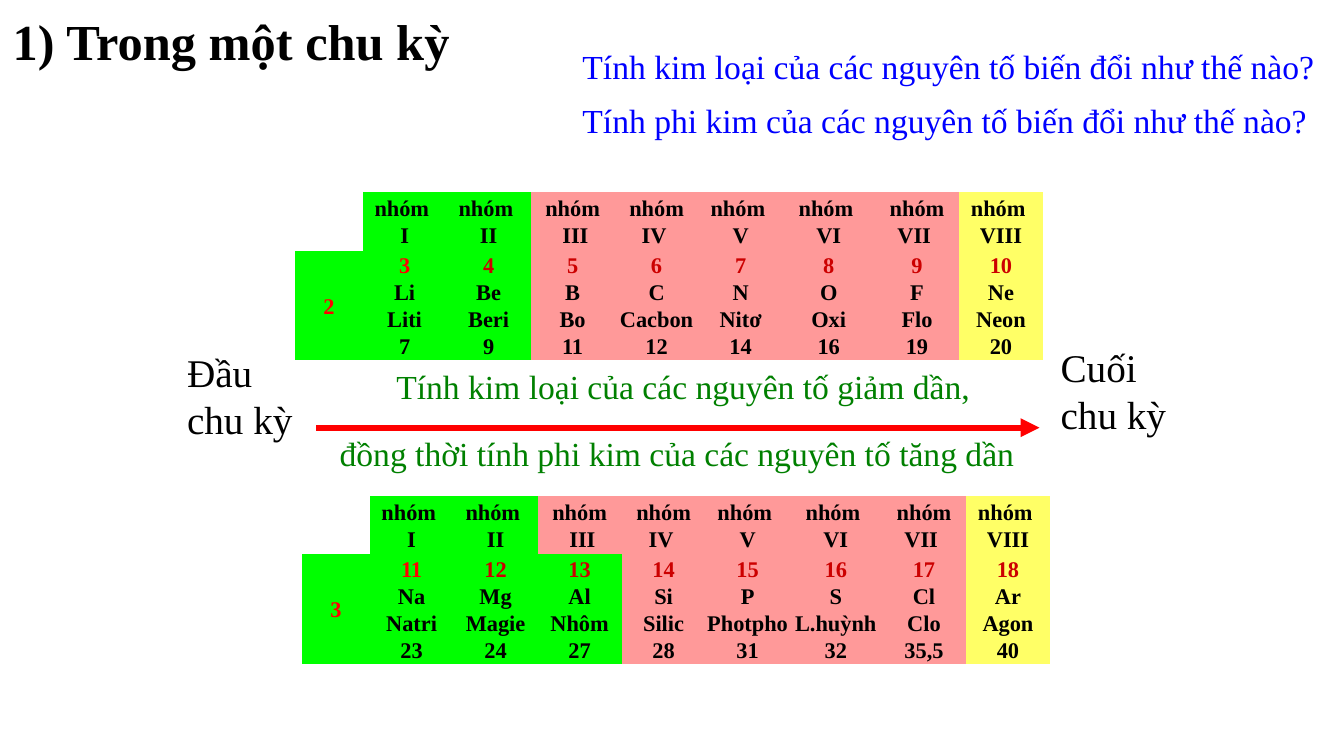
import pptx
import pptx.util
import pptx.dml.color
import pptx.enum.shapes
import pptx.enum.text
import pptx.oxml.ns
from lxml import etree

Pt = pptx.util.Pt
FONT = "Times New Roman"
COLORS = {
    "black": "000000", "red": "FF0000", "dark_red": "CC0000",
    "blue": "0000FF", "dark_green": "008000",
    "metal": "00FF00", "nonmetal": "FF9999", "noble": "FFFF66",
}

# Content: text, box (left, top, width, height), size, bold, colour
TEXTS = [
    ("1) Trong một chu kỳ", (2, 3.6, 595, 51), 36, True, "black"),
    ("Đầu chu kỳ", (126.5, 245, 90, 75), 28, False, "black"),
    ("Cuối chu kỳ", (750.5, 241.7, 90, 75), 28, False, "black"),
    ("Tính kim loại của các nguyên tố biến đổi như thế nào?",
     (409, 29, 546, 36.5), 24, False, "blue"),
    ("Tính phi kim của các nguyên tố biến đổi như thế nào?",
     (409, 67.5, 534, 36.5), 24, False, "blue"),
    ("Tính kim loại của các nguyên tố giảm dần,",
     (276, 258, 542, 36), 24, False, "dark_green"),
    ("đồng thời tính phi kim của các nguyên tố tăng dần",
     (235.5, 305.5, 528, 36), 24, False, "dark_green"),
]
GROUPS = [
    ("nhóm ", "I"), ("nhóm ", "II"), ("nhóm", " III"), ("nhóm", "IV "),
    ("nhóm ", "V"), ("nhóm ", "VI"), ("nhóm", "VII "), ("nhóm ", "VIII"),
]
# Period, left, top, number of metals, elements
PERIODS = [
    ("2", 211, 137, 2, [
        ("3", "Li", "Liti", "7"), ("4", "Be", "Beri", "9"),
        ("5", "B", "Bo", "11"), ("6", "C", "Cacbon", "12"),
        ("7", "N", "Nitơ", "14"), ("8", "O", "Oxi", "16"),
        ("9", "F", "Flo", "19"), ("10", "Ne", "Neon", "20")]),
    ("3", 216, 354, 3, [
        ("11", "Na", "Natri", "23"), ("12", "Mg", "Magie", "24"),
        ("13", "Al", "Nhôm", "27"), ("14", "Si", "Silic", "28"),
        ("15", "P", "Photpho", "31"), ("16", "S", "L.huỳnh", "32"),
        ("17", "Cl", "Clo", "35,5"), ("18", "Ar", "Agon", "40")]),
]
LABEL_W, HEAD_H, BODY_H = 48, 42, 78
COL_WIDTHS = [60, 60, 60, 60, 60, 66, 60, 60]
HEAD_METALS = 2
ARROW = (226, 742.5, 305.5)  # start x, end x, y


def rgb(name):
    return pptx.dml.color.RGBColor.from_string(COLORS[name])


def add_run(p, text, size, bold, color):
    r = p.add_run()
    r.text = text
    r.font.name = FONT
    r.font.size = Pt(size)
    r.font.bold = bold
    r.font.color.rgb = rgb(color)


def add_cell(shapes, box, fill, lines, first_color):
    sp = shapes.add_shape(pptx.enum.shapes.MSO_SHAPE.ACTION_BUTTON_CUSTOM,
                          *[Pt(v) for v in box])
    sp.shadow.inherit = False
    sp.fill.solid()
    sp.fill.fore_color.rgb = rgb(fill)
    sp.line.fill.background()
    tf = sp.text_frame
    tf.word_wrap = False
    tf.vertical_anchor = pptx.enum.text.MSO_ANCHOR.MIDDLE
    for i, line in enumerate(lines):
        p = tf.add_paragraph() if i else tf.paragraphs[0]
        p.alignment = pptx.enum.text.PP_ALIGN.CENTER
        add_run(p, line, 16, True, "black" if i else first_color)


def family(col, metals):
    if col == len(GROUPS) - 1:
        return "noble"
    return "metal" if col < metals else "nonmetal"


prs = pptx.Presentation()
prs.slide_width, prs.slide_height = Pt(960), Pt(540)
s = prs.slides.add_slide(prs.slide_layouts[6])

# Period tables: a row of group headings over a row of elements
for period, left, top, metals, elements in PERIODS:
    body_top = top + HEAD_H
    row = s.shapes.add_group_shape()
    add_cell(row.shapes, (left, body_top, LABEL_W, BODY_H), "metal",
             [period], "red")
    for col, (heading, element, width) in enumerate(
            zip(GROUPS, elements, COL_WIDTHS)):
        x = left + LABEL_W + sum(COL_WIDTHS[:col])
        add_cell(s.shapes, (x, top, width, HEAD_H),
                 family(col, HEAD_METALS), heading, "black")
        add_cell(row.shapes, (x, body_top, width, BODY_H),
                 family(col, metals), element, "dark_red" if col else "red")

# Arrow from the start to the end of a period
x1, x2, y = ARROW
arrow = s.shapes.add_connector(pptx.enum.shapes.MSO_CONNECTOR.STRAIGHT,
                               Pt(x1), Pt(y), Pt(x2), Pt(y))
arrow.line.color.rgb = rgb("red")
arrow.line.width = Pt(4.5)
qn = pptx.oxml.ns.qn
etree.SubElement(arrow.line._get_or_add_ln(), qn("a:tailEnd"), type="triangle")
etree.SubElement(arrow._element.spPr, qn("a:effectLst"))

# Title, questions, conclusions and end labels
for text, box, size, bold, color in TEXTS:
    tf = s.shapes.add_textbox(*[Pt(v) for v in box]).text_frame
    tf.word_wrap = True
    tf.auto_size = pptx.enum.text.MSO_AUTO_SIZE.SHAPE_TO_FIT_TEXT
    add_run(tf.paragraphs[0], text, size, bold, color)

prs.save("out.pptx")
